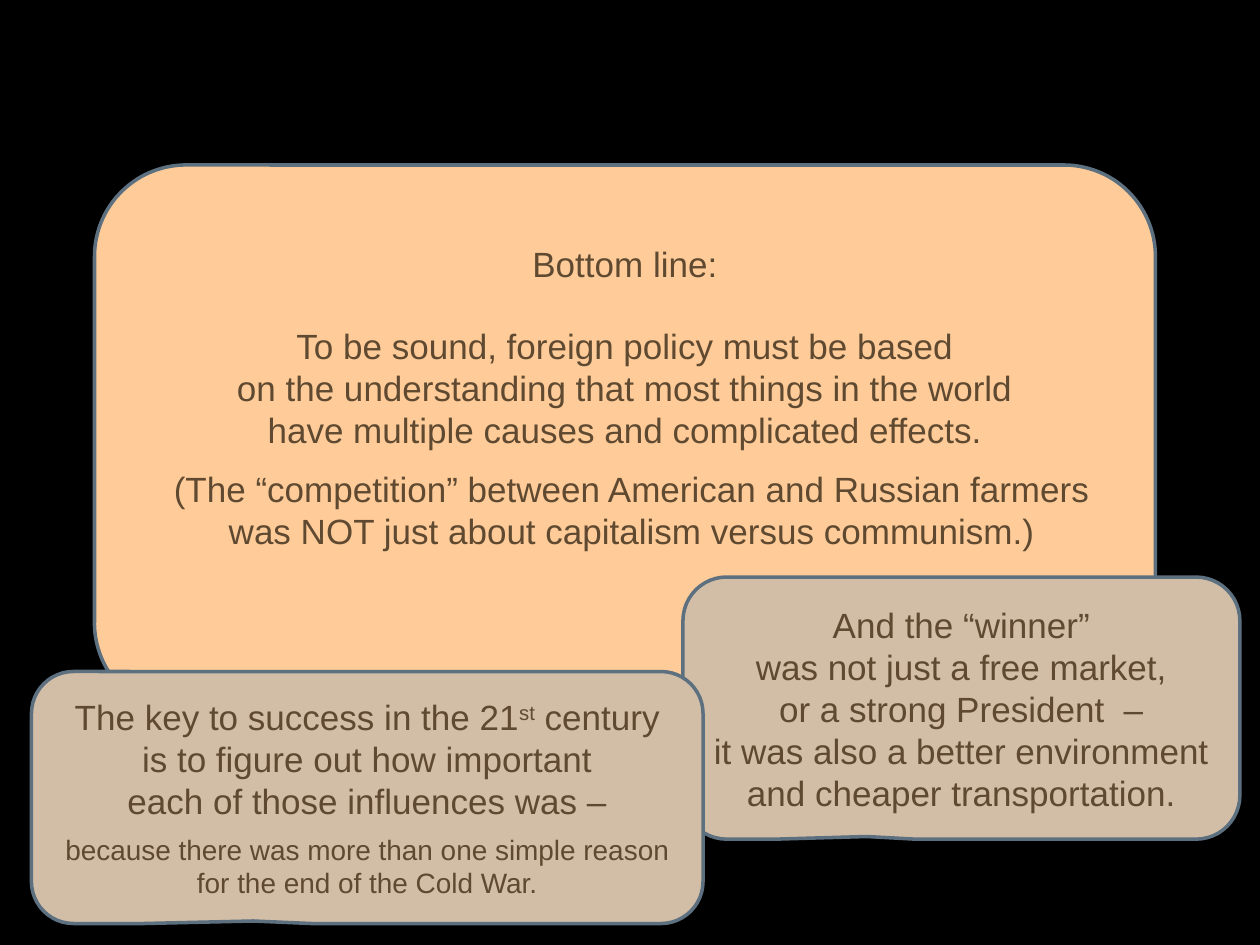
from pptx import Presentation
from pptx.dml.color import RGBColor
from pptx.enum.shapes import MSO_SHAPE
from pptx.enum.text import MSO_ANCHOR, PP_ALIGN
from pptx.util import Inches, Pt

CALLOUT = MSO_SHAPE.ROUNDED_RECTANGULAR_CALLOUT
TOP, MIDDLE = MSO_ANCHOR.TOP, MSO_ANCHOR.MIDDLE
CENTER = PP_ALIGN.CENTER
PEACH, TAN, SLATE, BROWN = "FFCC99", "D2BEA7", "5D7080", "5F4A31"


def rgb(value):
    return RGBColor.from_string(value)


def add_callout(box, fill, lines, tail=(-0.17, 0.49), outlined=True):
    """Add a callout with centred lines and return its text frame."""
    sp = slide.shapes.add_shape(CALLOUT, *(Inches(v) for v in box))
    sp.shadow.inherit = False
    sp.adjustments[0], sp.adjustments[1] = tail
    sp.fill.solid()
    sp.fill.fore_color.rgb = rgb(fill)
    if outlined:
        sp.line.color.rgb = rgb(SLATE)
        sp.line.width = Pt(2)
    else:
        sp.line.fill.background()
    tf = sp.text_frame
    tf.word_wrap = True
    tf.vertical_anchor = MIDDLE
    tf.text = "\n".join(lines)
    for p in tf.paragraphs:
        p.alignment = CENTER
        p.font.name = "Arial"
        p.font.size = Pt(20)
        p.font.color.rgb = rgb(BROWN)
        for r in p.runs:
            r.font.name = "Arial"
            r.font.size = Pt(20)
            r.font.color.rgb = rgb(BROWN)
    return tf


prs = Presentation()
prs.slide_width, prs.slide_height = Inches(10), Inches(7.5)
slide = prs.slides.add_slide(prs.slide_layouts[6])
slide.background.fill.solid()
slide.background.fill.fore_color.rgb = rgb("000000")

bottom_line = add_callout((0.75, 1.31, 8.42, 4.36), PEACH, [
    "Bottom line:",
    "To be sound, foreign policy must be based",
    "on the understanding that most things in the world",
    "have multiple causes and complicated effects.",
])
bottom_line.vertical_anchor = TOP
bottom_line.margin_top = Inches(0.4)
bottom_line.paragraphs[1].space_before = Pt(23)

add_callout((0.93, 3.67, 8.17, 0.74), PEACH, [
    "(The “competition” between American and Russian farmers",
    "was NOT just about capitalism versus communism.)",
], tail=(-0.5, -0.14), outlined=False)

add_callout((5.42, 4.58, 4.42, 2.08), TAN, [
    "And the “winner”",
    "was not just a free market,",
    "or a strong President  –",
    "it was also a better environment",
    "and cheaper transportation.",
])

success = add_callout((0.25, 5.33, 5.33, 2), TAN, [
    "The key to success in the 21",
    "is to figure out how important",
    "each of those influences was –",
    "because there was more than one simple reason for the end of the Cold War.",
])
first, reason = success.paragraphs[0], success.paragraphs[-1]
for text, baseline in (("st", "30000"), (" century", "0")):
    r = first.add_run()
    r.text = text
    r.font.name = "Arial"
    r.font.size = Pt(20)
    r.font.color.rgb = rgb(BROWN)
    r._r.get_or_add_rPr().set("baseline", baseline)
reason.space_before = Pt(6)
reason.runs[0].font.size = Pt(16)

prs.save("out.pptx")
